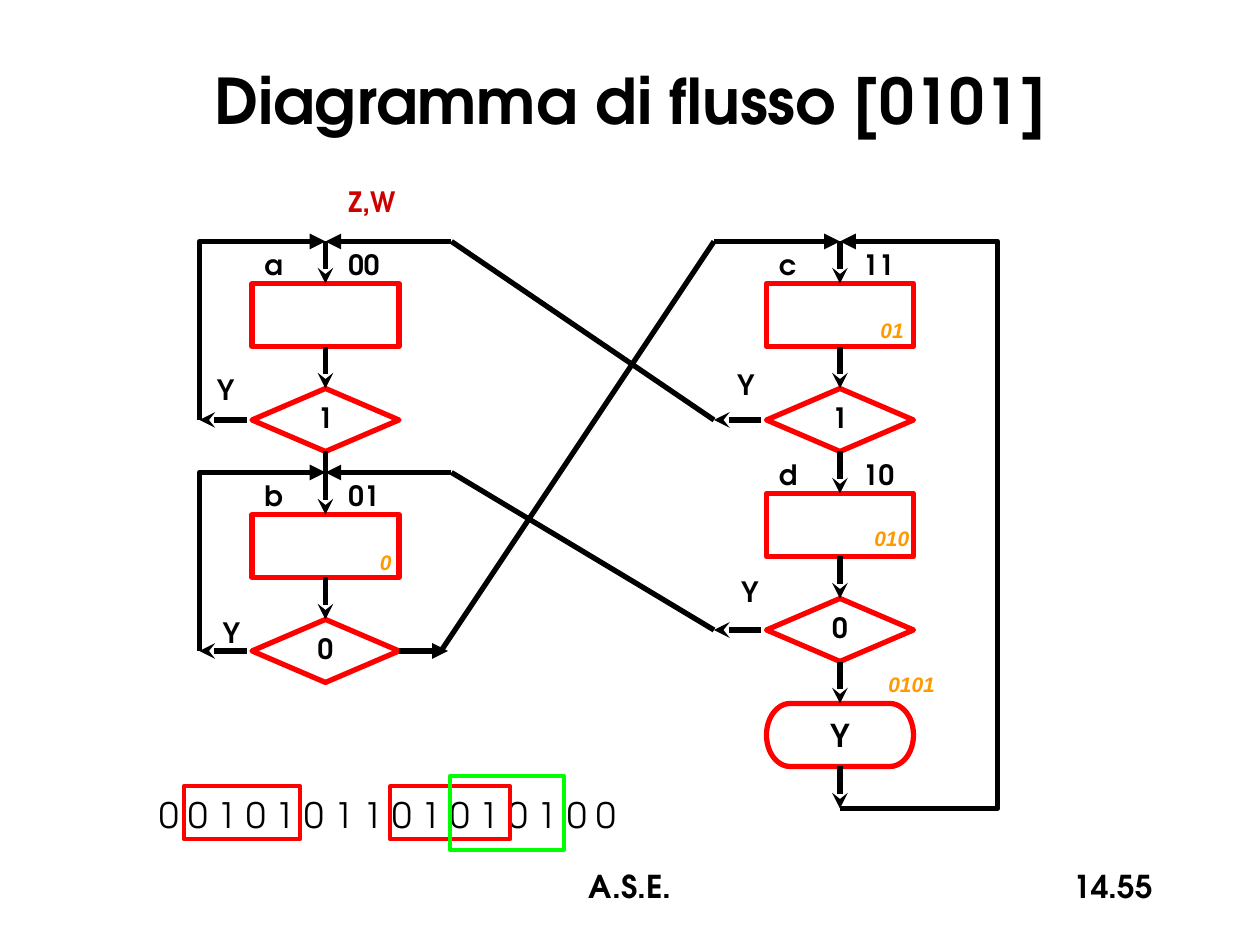
from pptx import Presentation
from pptx.dml.color import RGBColor
from pptx.enum.shapes import MSO_CONNECTOR, MSO_SHAPE
from pptx.enum.text import MSO_ANCHOR, MSO_AUTO_SIZE, PP_ALIGN
from pptx.oxml.ns import qn
from pptx.util import Pt
from lxml import etree

RECT = MSO_SHAPE.RECTANGLE
DIAMOND = MSO_SHAPE.DIAMOND
TERMINATOR = MSO_SHAPE.FLOWCHART_TERMINATOR
STRAIGHT = MSO_CONNECTOR.STRAIGHT
LEFT, CENTER, RIGHT = PP_ALIGN.LEFT, PP_ALIGN.CENTER, PP_ALIGN.RIGHT
TOP, MIDDLE = MSO_ANCHOR.TOP, MSO_ANCHOR.MIDDLE
GROW = MSO_AUTO_SIZE.SHAPE_TO_FIT_TEXT

FONT = "TeX Gyre Adventor"
BLACK, RED, GREEN = "000000", "FF0000", "00FF00"
DARK_RED, ORANGE = "CC0000", "FF9900"

# Flowchart grid: every stage is a box and a test of the same size
BOX_W, BOX_H = 84, 36
ENTRY, TEST = 24, 84          # from stage top to box and to test
TEST_MID = TEST + BOX_H / 2
LEFT_X, RIGHT_X = 186, 480    # column centres
SIDE = 72                     # from column centre to the end of a side arrow
ROW_A, ROW_B, ROW_D, ROW_END = 138, 270, 258, 402


def color(value):
    return RGBColor.from_string(value)


def write(sp, text, size=16, align=LEFT, col=BLACK, font=FONT, bold=True,
          italic=False):
    p = sp.text_frame.paragraphs[0]
    p.text = text
    p.alignment = align
    f = p.runs[0].font
    f.name, f.size, f.bold, f.italic = font, Pt(size), bold, italic
    f.color.rgb = color(col)
    return p


def add_text(s, x, y, w, h, text, anchor=TOP, wrap=True, **style):
    sp = s.shapes.add_textbox(Pt(x), Pt(y), Pt(w), Pt(h))
    tf = sp.text_frame
    tf.word_wrap = wrap
    tf.vertical_anchor = anchor
    if not wrap:
        tf.auto_size = GROW
    write(sp, text, **style)


def add_label(s, x, y, text, w=34, **style):
    add_text(s, x, y, w, 26.5, text, wrap=False, **style)


def add_note(s, x, y, text, w):
    add_text(s, x, y, w, 21.8, text, wrap=False, size=12, col=ORANGE,
             font="Arial", italic=True)


def add_outline(s, kind, x, y, w, h, col=RED, width=3):
    sp = s.shapes.add_shape(kind, Pt(x), Pt(y), Pt(w), Pt(h))
    sp.shadow.inherit = False
    sp.fill.background()
    sp.line.color.rgb = color(col)
    sp.line.width = Pt(width)
    return sp


def style_line(sp, arrow):
    sp.line.color.rgb = color(BLACK)
    sp.line.width = Pt(3)
    if arrow:
        ln = sp._element.spPr.find(qn("a:ln"))
        etree.SubElement(ln, qn("a:tailEnd"), type=arrow)


def add_line(s, x1, y1, x2, y2, arrow="stealth", begin=None, end=None):
    """Straight line; begin and end are optional (shape, side) joints."""
    c = s.shapes.add_connector(STRAIGHT, Pt(x1), Pt(y1), Pt(x2), Pt(y2))
    if begin:
        c.begin_connect(*begin)
    if end:
        c.end_connect(*end)
    style_line(c, arrow)
    etree.SubElement(c._element.spPr, qn("a:effectLst"))


def add_path(s, points):
    pts = [(Pt(x), Pt(y)) for x, y in points]
    builder = s.shapes.build_freeform(*pts[0], scale=1.0)
    builder.add_line_segments(pts[1:], close=False)
    sp = builder.convert_to_shape()
    sp.shadow.inherit = False
    sp.fill.background()
    style_line(sp, "triangle")


def add_stage(s, cx, top, name, code, test, yes, previous=None):
    """State box, its test and the arrows between; yes is the Y label's place."""
    x = cx - BOX_W / 2
    box = add_outline(s, RECT, x, top + ENTRY, BOX_W, BOX_H)
    diamond = add_outline(s, DIAMOND, x, top + TEST, BOX_W, BOX_H)
    tf = diamond.text_frame
    tf.word_wrap = True
    tf.vertical_anchor = TOP
    tf.margin_top = 0
    write(diamond, test, align=CENTER).line_spacing = 0.9

    begin = (previous, 2) if previous else None
    add_line(s, cx, top, cx, top + ENTRY, begin=begin, end=(box, 0))
    add_line(s, cx, top + ENTRY + BOX_H, cx, top + TEST,
             begin=(box, 2), end=(diamond, 0))
    y = top + TEST_MID
    add_line(s, cx - 45, y, cx - SIDE, y)

    add_label(s, x, top, name, w=24)
    add_label(s, cx + 6, top, code)
    add_label(s, *yes, "Y", w=24.5, align=CENTER)
    return diamond


def add_left_column(s, cx):
    a = add_stage(s, cx, ROW_A, "a", "00", "1", (116.6, 209.5))
    b = add_stage(s, cx, ROW_B, "b", "01", "0", (120, 348), previous=a)
    for top in (ROW_A, ROW_B):
        # Loop back to the stage, and entry from the right column
        add_path(s, [(cx - SIDE, top + TEST_MID), (cx - SIDE, top), (cx, top)])
        add_line(s, cx + SIDE, top, cx, top, "triangle")
    y = ROW_B + TEST_MID
    add_line(s, cx + BOX_W / 2, y, cx + 70, y, "triangle", begin=(b, 3))
    add_label(s, cx + 6, 102, "Z,W", w=54, col=DARK_RED)
    add_note(s, cx + 24, 310.5, "0", 21)


def add_right_column(s, cx):
    c = add_stage(s, cx, ROW_A, "c", "11", "1", (414, 206.6))
    d = add_stage(s, cx, ROW_D, "d", "10", "0", (416.2, 324.7), previous=c)

    # Final state and the way back to the top
    final = add_outline(s, TERMINATOR, cx - BOX_W / 2, ROW_END, BOX_W, BOX_H)
    final.text_frame.word_wrap = False
    final.text_frame.vertical_anchor = MIDDLE
    write(final, "Y", size=18, align=CENTER)
    bottom = ROW_END + BOX_H + ENTRY
    add_line(s, cx, ROW_END - ENTRY, cx, ROW_END, begin=(d, 2), end=(final, 0))
    add_line(s, cx, bottom - ENTRY, cx, bottom, begin=(final, 2))
    add_path(s, [(cx, bottom), (cx + 90, bottom), (cx + 90, ROW_A), (cx, ROW_A)])
    add_line(s, cx - SIDE, ROW_A, cx, ROW_A, "triangle")

    for x, y, text, w in ((16, 178, "01", 28), (12.5, 296.8, "010", 34.5),
                          (20.5, 380, "0101", 41)):
        add_note(s, cx + x, y, text, w)


def add_crossings(s):
    left, right = LEFT_X + SIDE, RIGHT_X - SIDE
    for x1, y1, x2, y2 in ((right, ROW_A, 252, ROW_B + TEST_MID),
                           (left, ROW_B, right, ROW_D + TEST_MID),
                           (left, ROW_A, right, ROW_A + TEST_MID)):
        add_line(s, x1, y1, x2, y2, arrow=None)


def add_sequence(s, x, y):
    add_text(s, x, y, 279.5, 31, "0 0 1 0 1 0 1 1 0 1 0 1 0 1 0 0",
             wrap=False, size=20, bold=False)
    for dx, dy, w, h, col in ((21, -0.7, 66.5, 30.3, RED),
                              (139, -0.7, 68.5, 30.3, RED),
                              (173, -6.5, 65.5, 42, GREEN)):
        add_outline(s, RECT, x + dx, y + dy, w, h, col, 2.25)


def add_frame(s):
    add_text(s, 12, 12, 696, 90, "Diagramma di flusso [0101]", anchor=MIDDLE,
             size=36, align=CENTER)
    add_text(s, 516, 492, 150, 36, "14.55", size=18, align=RIGHT)
    add_text(s, 246, 492, 228, 36, "A.S.E.", size=18, align=CENTER)


def main():
    prs = Presentation()
    prs.slide_width, prs.slide_height = Pt(720), Pt(540)
    s = prs.slides.add_slide(prs.slide_layouts[6])
    add_frame(s)
    add_sequence(s, 84, 450)
    add_left_column(s, LEFT_X)
    add_right_column(s, RIGHT_X)
    add_crossings(s)
    prs.save("out.pptx")


if __name__ == "__main__":
    main()
